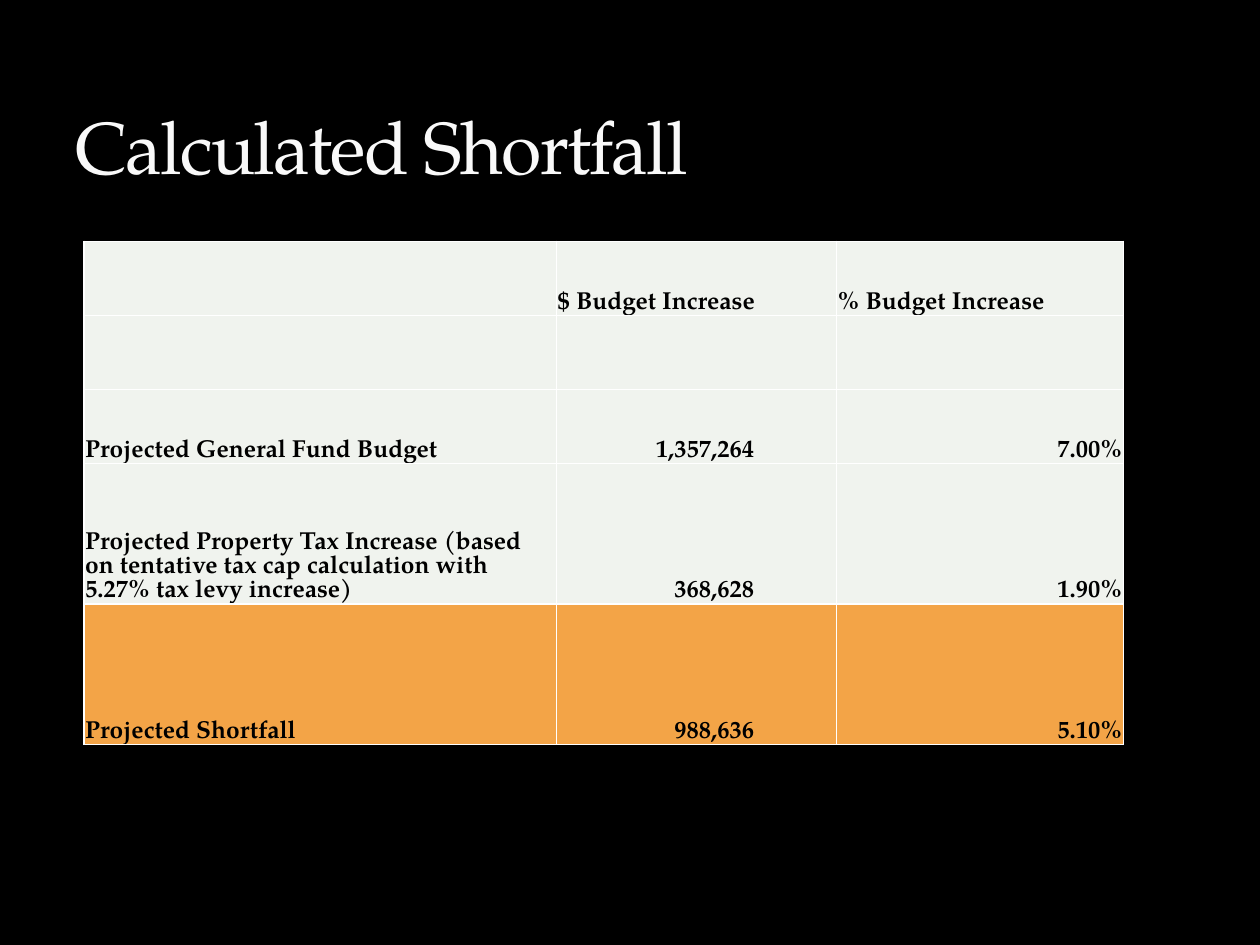
"""Build the calculated shortfall slide."""
import pptx
import pptx.dml.color
import pptx.enum.text
import pptx.oxml
import pptx.oxml.ns
import pptx.util

Pt = pptx.util.Pt
ALIGN = pptx.enum.text.PP_ALIGN
BOTTOM = pptx.enum.text.MSO_ANCHOR.BOTTOM
FONT = "TeX Gyre Pagella"
COLORS = {"back": "000000", "title": "F9F9F9", "text": "000000",
          "line": "FFFFFF", "pale": "F0F3EE", "orange": "F3A447"}
COLS = [270, 160, 164]
ROWS = [42.3, 42.3, 42.3, 80.3, 80.3]
DATA = [
    ["", "$ Budget Increase", "% Budget Increase"],
    ["", "", ""],
    ["Projected General Fund Budget", "1,357,264", "7.00%"],
    ["Projected Property Tax Increase (based on tentative tax cap "
     "calculation with 5.27% tax levy increase)", "368,628", "1.90%"],
    ["Projected Shortfall", "988,636", "5.10%"],
]


def color(name):
    """Return the named colour."""
    return pptx.dml.color.RGBColor.from_string(COLORS[name])


def add_run(para, text, size, name, bold=False):
    """Add a styled run to a paragraph."""
    run = para.add_run()
    run.text = text
    run.font.name = FONT
    run.font.size = Pt(size)
    run.font.bold = bold
    run.font.color.rgb = color(name)
    return run


def add_title(slide, text):
    """Add the slide title."""
    box = slide.shapes.add_textbox(Pt(36), Pt(12), Pt(648), Pt(96))
    frame = box.text_frame
    frame.word_wrap = True
    frame.vertical_anchor = BOTTOM
    frame.margin_bottom = 0
    run = add_run(frame.paragraphs[0], text, 42, "title")
    run.font._element.set("spc", "-100")


def add_edges(cell):
    """Draw a thin line on each side of a cell."""
    props = cell._tc.get_or_add_tcPr()
    for spot, tag in enumerate(("lnL", "lnR", "lnT", "lnB")):
        edge = pptx.oxml.parse_xml(
            f'<a:{tag} {pptx.oxml.ns.nsdecls("a")} w="{Pt(1)}"><a:solidFill>'
            f'<a:srgbClr val="{COLORS["line"]}"/></a:solidFill></a:{tag}>')
        props.insert(spot, edge)


def fill_cell(cell, text, fill, number, inset):
    """Set the fill, edges and text of a cell."""
    cell.fill.solid()
    cell.fill.fore_color.rgb = color(fill)
    add_edges(cell)
    cell.vertical_anchor = BOTTOM
    cell.margin_left = cell.margin_top = Pt(0.7)
    cell.margin_right = Pt(inset)
    cell.margin_bottom = 0
    if text:
        para = cell.text_frame.paragraphs[0]
        para.alignment = ALIGN.RIGHT if number else ALIGN.LEFT
        para.line_spacing = Pt(13.7)
        add_run(para, text, 14, "text", True)


def add_grid(slide):
    """Add the budget table."""
    table = slide.shapes.add_table(
        len(ROWS), len(COLS), Pt(48), Pt(138),
        Pt(sum(COLS)), Pt(sum(ROWS))).table
    table.first_row = table.horz_banding = False
    for col, width in zip(table.columns, COLS):
        col.width = Pt(width)
    for y, (row, height) in enumerate(zip(table.rows, ROWS)):
        row.height = Pt(height)
        fill = "orange" if y == len(ROWS) - 1 else "pale"
        for x, text in enumerate(DATA[y]):
            number = y > 0 and x > 0
            inset = 47 if number and x == 1 else 0.7
            fill_cell(table.cell(y, x), text, fill, number, inset)


def main():
    """Build and save the slide."""
    deck = pptx.Presentation()
    deck.slide_width, deck.slide_height = Pt(720), Pt(540)
    slide = deck.slides.add_slide(deck.slide_layouts[6])
    slide.background.fill.solid()
    slide.background.fill.fore_color.rgb = color("back")
    add_title(slide, "Calculated Shortfall")
    add_grid(slide)
    deck.save("out.pptx")


if __name__ == "__main__":
    main()
